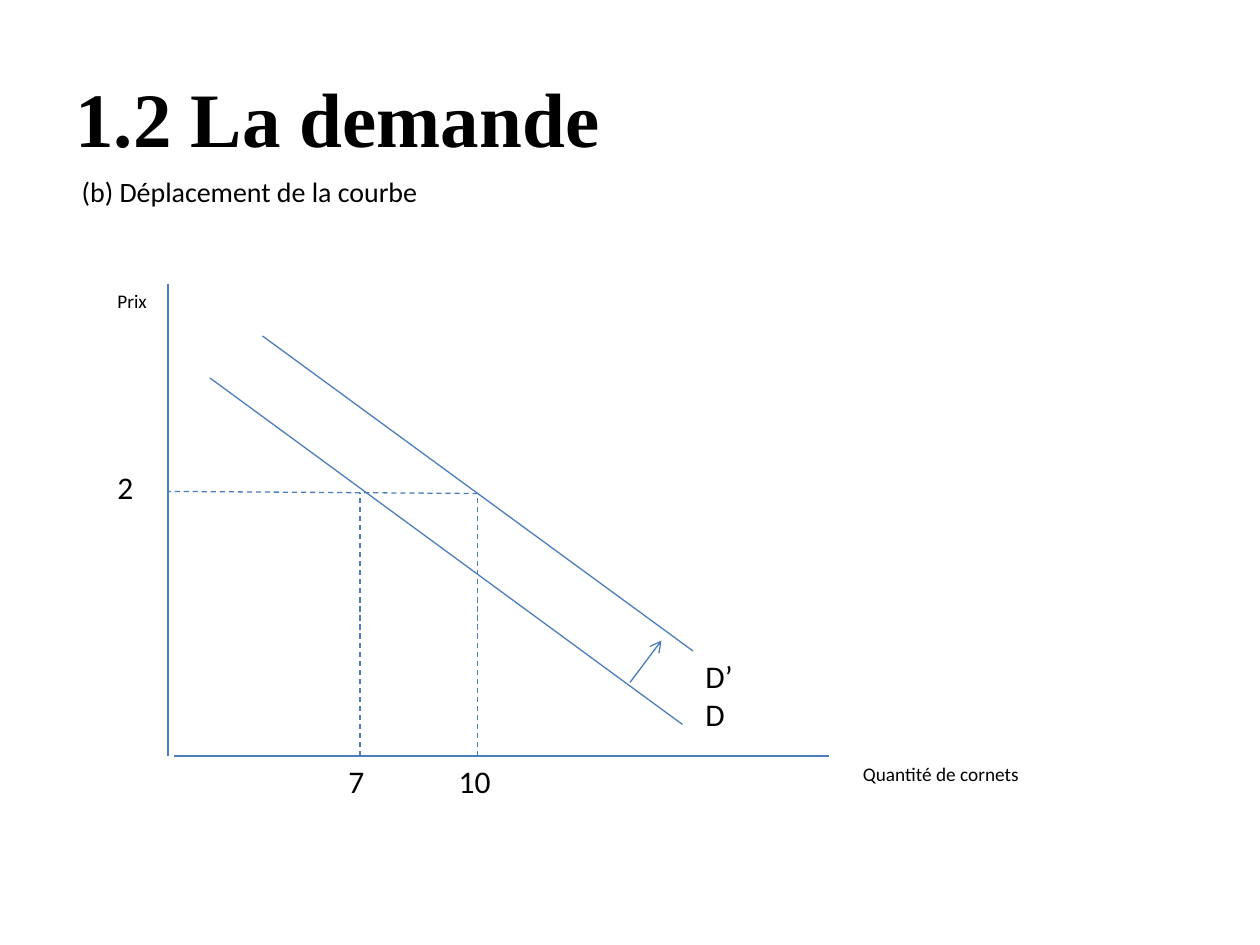
from lxml.etree import SubElement
from pptx import Presentation
from pptx.dml.color import RGBColor
from pptx.enum.dml import MSO_LINE
from pptx.enum.shapes import MSO_CONNECTOR
from pptx.enum.text import MSO_ANCHOR
from pptx.oxml.ns import qn
from pptx.util import Inches, Pt

deck = Presentation()
deck.slide_width, deck.slide_height = Inches(10), Inches(7.5)
slide = deck.slides.add_slide(deck.slide_layouts[6])
UNIT = deck.slide_width / 120  # grid of 120 columns by 90 rows


def grid(*cells):
    return [round(n * UNIT) for n in cells]


def write(text, box, size, font="Calibri"):
    frame = slide.shapes.add_textbox(*grid(*box)).text_frame
    frame.word_wrap = True
    frame.text = text
    for par in frame.paragraphs:
        face = par.runs[0].font
        face.name, face.size = font, Pt(size)
        face.color.rgb = RGBColor.from_string("000000")
    return frame


title = write("1.2 La demande", (6, 3.6, 108, 15), 44, "Times New Roman")
title.vertical_anchor = MSO_ANCHOR.MIDDLE
title.paragraphs[0].runs[0].font.bold = True

head = write(" (b) Déplacement de la courbe", (6, 16, 108, 4.4), 16)
head.paragraphs[0].space_before = Pt(3.2)

# Axes, curves and guides share the origin, the price and the two quantities
left, base = 16, 72
price, seven, ten = 47, 34.3, 45.5

lines = [
    ((left, 27, left, base), "solid"),
    ((left + 0.6, base, 79, base), "solid"),
    ((seven, base, seven, price), "dash"),
    ((ten, price, left, price - 0.2), "dash"),
    ((ten, base, ten, price), "dash"),
    ((20, 36, 65, 69), "solid"),
    ((25, 32, 66, 62), "solid"),
    ((60, 65, 63, 61), "arrow"),
]
for ends, style in lines:
    line = slide.shapes.add_connector(MSO_CONNECTOR.STRAIGHT, *grid(*ends))
    line.line.color.rgb = RGBColor.from_string("4B7EBC")
    line.line.width = Pt(0.75)
    if style == "dash":
        line.line.dash_style = MSO_LINE.DASH
    if style == "arrow":
        SubElement(line.line._get_or_add_ln(), qn("a:tailEnd"), type="arrow")
    SubElement(line._element.spPr, qn("a:effectLst"))

labels = [
    ("7", (32, base, 11, 4.8), 18),
    ("10", (42.5, base, 12.2, 4.8), 18),
    ("2", (10, 44, 6, 4.8), 18),
    ("Prix", (10, 27, 6, 7), 11),
    ("Quantité de cornets", (81, base, 18, 3.5), 11),
    ("D’\nD", (66, 62, 28, 12), 18),
]
for text, box, size in labels:
    write(text, box, size)

deck.save("out.pptx")
